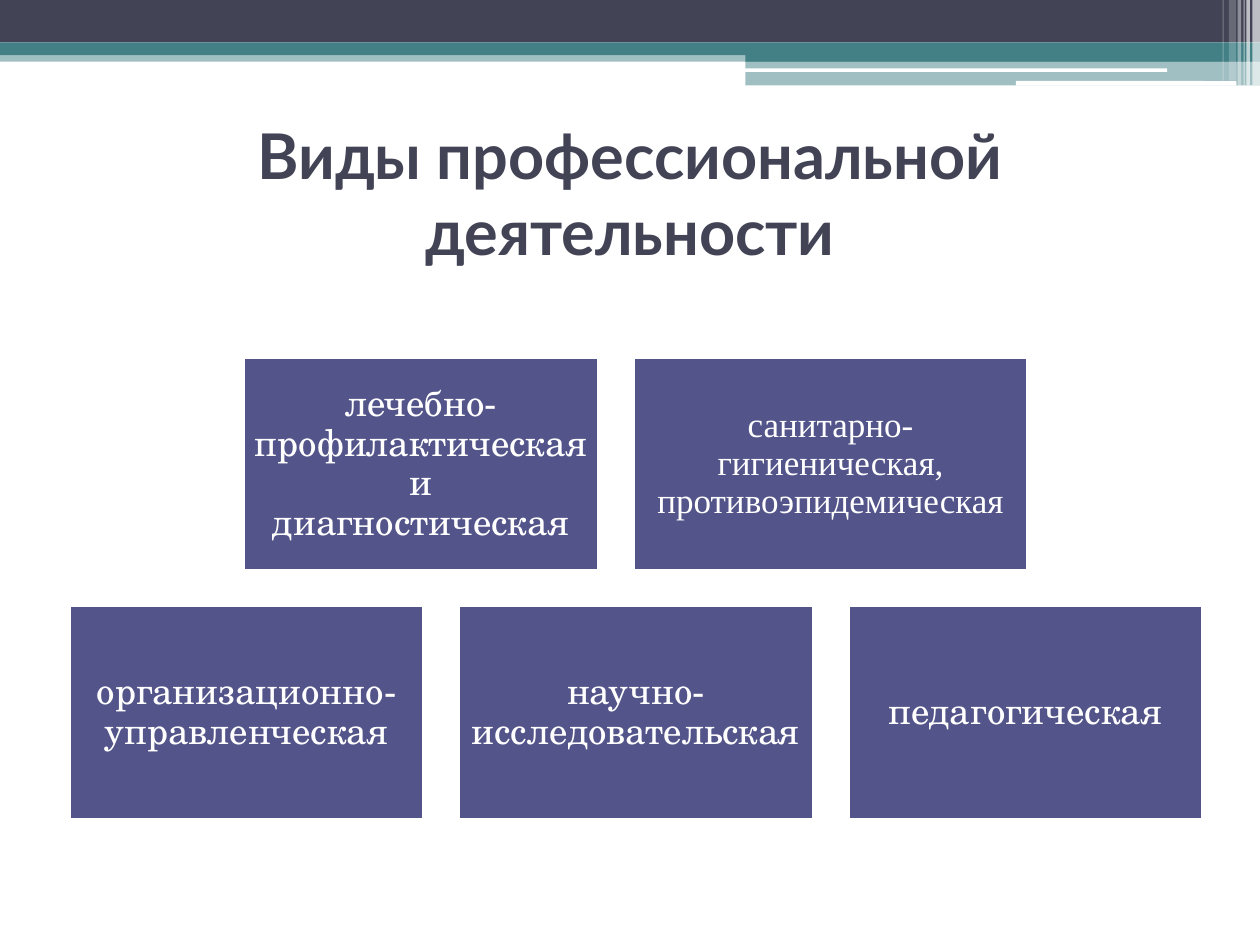
"""Build a slide of professional activity types as two centred rows of boxes."""
from dataclasses import dataclass

from lxml.etree import SubElement
from pptx import Presentation
from pptx.dml.color import RGBColor
from pptx.enum.shapes import MSO_SHAPE as Shape
from pptx.enum.text import MSO_ANCHOR as Anchor, MSO_AUTO_SIZE as AutoSize, PP_ALIGN as Align
from pptx.oxml.ns import qn
from pptx.slide import Slide
from pptx.util import Pt

WHITE = RGBColor(0xFF, 0xFF, 0xFF)
SLATE = RGBColor(0x42, 0x44, 0x56)
TEAL = RGBColor(0x43, 0x80, 0x86)
INDIGO = RGBColor(0x53, 0x54, 0x8A)

HEADER_BARS = [
    (0, 28.8, 720, 6.48, TEAL, 50),
    (0, 0, 720, 24.3, SLATE, 100),
    (0, 24.3, 720, 7.2, TEAL, 100),
    (426, 28.1, 294, 7.2, TEAL, 100),
    (426, 34.6, 294, 14.2, TEAL, 50),
]
HEADER_LINES = [(425.8, 39.1, 241.2, 2), (580.5, 46.3, 126, 2.7)]
EDGE_STRIPES = [
    (715.7, 4.3, 48.8, 65),
    (712.2, 2, 48.8, 65),
    (710.6, 0.7, 48.8, 60),
    (707.2, 2, 48.8, 40),
    (702.2, 4, 46.1, 20),
    (698.6, 0.7, 46.1, 30),
]

BOX_WIDTH, WIDE_BOX_WIDTH, BOX_HEIGHT, GAP = 202.3, 225.4, 121.7, 20.2
ROWS_TOP, ROWS_CENTER = 204.4, 363.4
SERIF = {"font": "TeX Gyre Schola", "size": 21}
TIMES = {"font": "Times New Roman", "size": 20}
ROWS = [
    [
        ("лечебно- профилактическая и\vдиагностическая", BOX_WIDTH, SERIF),
        ("санитарно-гигиеническая, противоэпидемическая", WIDE_BOX_WIDTH, TIMES),
    ],
    [
        ("организационно-управленческая", BOX_WIDTH, SERIF),
        ("научно-исследовательская", BOX_WIDTH, SERIF),
        ("педагогическая", BOX_WIDTH, SERIF),
    ],
]


def write_text(shape, text, *, font, size, color=WHITE, bold=False, spacing=1.0, inset=6):
    frame = shape.text_frame
    frame.word_wrap = True
    frame.auto_size = AutoSize.NONE
    frame.vertical_anchor = Anchor.MIDDLE
    frame.margin_left = frame.margin_right = Pt(inset)
    frame.margin_top = frame.margin_bottom = Pt(inset)
    frame.text = text
    paragraph = frame.paragraphs[0]
    paragraph.alignment = Align.CENTER
    paragraph.line_spacing = spacing
    for run in paragraph.runs:
        run.font.name = font
        run.font.size = Pt(size)
        run.font.bold = bold
        run.font.color.rgb = color


@dataclass
class SlideBuilder:
    slide: Slide
    title_font: str = "Lato"
    box_fill: RGBColor = INDIGO
    box_line: RGBColor = WHITE

    def bar(self, left, top, width, height, color, opacity=100, kind=Shape.RECTANGLE):
        shape = self.slide.shapes.add_shape(kind, Pt(left), Pt(top), Pt(width), Pt(height))
        shape.shadow.inherit = False
        shape.line.fill.background()
        shape.fill.solid()
        shape.fill.fore_color.rgb = color
        if opacity < 100:
            color_element = shape.fill._xPr.find(qn("a:solidFill"))[0]
            SubElement(color_element, qn("a:alpha"), val=str(opacity * 1000))
        return shape

    def title(self, text, left, top, width, height):
        title = self.slide.shapes.title
        title.left, title.top, title.width, title.height = map(Pt, (left, top, width, height))
        write_text(title, text, font=self.title_font, size=36, color=SLATE, bold=True)

    def box(self, text, left, top, width, style):
        shape = self.bar(left, top, width, BOX_HEIGHT, self.box_fill)
        shape.line.color.rgb = self.box_line
        shape.line.width = Pt(1.5)
        write_text(shape, text, spacing=0.9, **style)

    def row(self, boxes, top):
        total = sum(width for _, width, _ in boxes) + GAP * (len(boxes) - 1)
        left = ROWS_CENTER - total / 2
        for text, width, style in boxes:
            self.box(text, left, top, width, style)
            left += width + GAP


def main():
    presentation = Presentation()
    presentation.slide_width, presentation.slide_height = Pt(720), Pt(540)
    builder = SlideBuilder(presentation.slides.add_slide(presentation.slide_layouts[5]))
    for bar in HEADER_BARS:
        builder.bar(*bar)
    for line in HEADER_LINES:
        builder.bar(*line, WHITE, kind=Shape.ROUNDED_RECTANGLE)
    for left, width, height, opacity in EDGE_STRIPES:
        builder.bar(left, 0, width, height, WHITE, opacity)
    builder.title("Виды профессиональной деятельности", 36, 67.7, 648, 84.2)
    for index, boxes in enumerate(ROWS):
        builder.row(boxes, ROWS_TOP + index * (BOX_HEIGHT + GAP))
    presentation.save("out.pptx")


if __name__ == "__main__":
    main()
